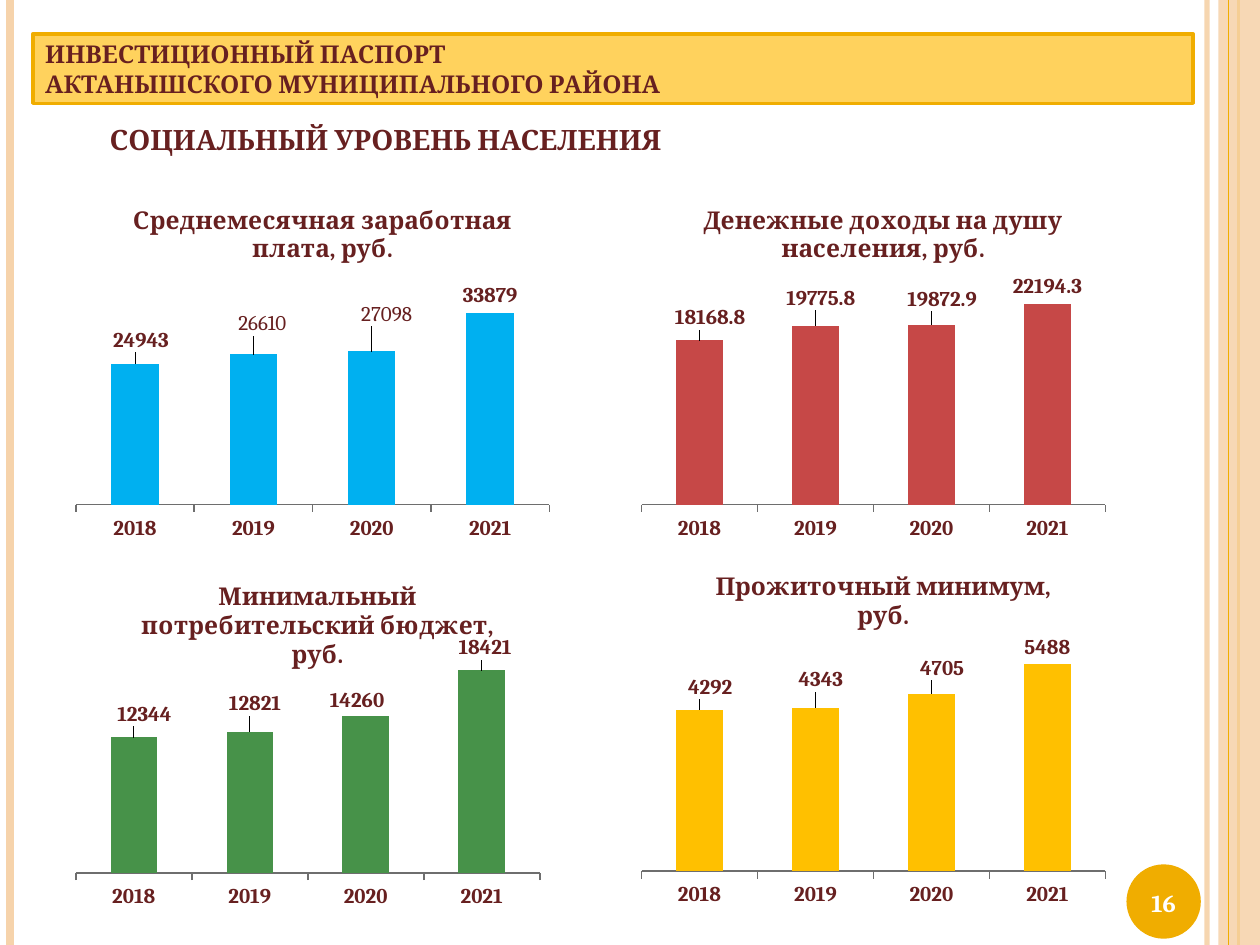
import pptx
import pptx.chart.data
import pptx.dml.color
import pptx.enum.chart
import pptx.enum.shapes
import pptx.enum.text
import pptx.oxml
import pptx.oxml.ns
import pptx.util
from lxml import etree

Pt = pptx.util.Pt
qn = pptx.oxml.ns.qn
FONT = "Cambria"
COLORS = {"peach": "F6D3AB", "gold": "F0AD00", "banner": "FFD25D", "text": "672020",
          "white": "FFFFFF", "axis": "6E6E6E", "wages": "00B0F0", "income": "C64847",
          "budget": "479249", "minimum": "FFC000"}
RGB = {name: pptx.dml.color.RGBColor.from_string(value) for name, value in COLORS.items()}


def style_font(font, size, color="text", bold=True):
    font.name, font.size, font.bold = FONT, Pt(size), bold
    font.color.rgb = RGB[color]


def manual_layout(parent, index, **values):
    """Place a c:layout with the given manualLayout values in a chart element."""
    for old in parent.findall(qn("c:layout")):
        parent.remove(old)
    layout = etree.Element(qn("c:layout"))
    manual = etree.SubElement(layout, qn("c:manualLayout"))
    for name, value in values.items():
        etree.SubElement(manual, qn("c:" + name)).set("val", str(value))
    parent.insert(index, layout)


presentation = pptx.Presentation()
presentation.slide_width, presentation.slide_height = Pt(720), Pt(540)
slide = presentation.slides.add_slide(presentation.slide_layouts[5])
shapes = slide.shapes

# Side stripes: x, colour, width, opacity in percent; the band lies over the third one
stripes = [(689.76, "peach", 3, 93), (5.76, "peach", 4.5, 100),
           (707.76, "gold", 1.5, 100), (702, "gold", 0.75, 100)]
for number, (x, color, width, opacity) in enumerate(stripes):
    if number == 3:
        band = shapes.add_shape(pptx.enum.shapes.MSO_SHAPE.RECTANGLE, Pt(696.24), 0, Pt(23.76), Pt(540))
        band.shadow.inherit = False
        band.fill.solid()
        band.fill.fore_color.rgb = RGB["peach"]
        band.line.fill.background()
        band_color = band.fill._xPr.find(".//" + qn("a:srgbClr"))
        etree.SubElement(band_color, qn("a:alpha")).set("val", "87000")
    stripe = shapes.add_connector(pptx.enum.shapes.MSO_CONNECTOR.STRAIGHT, Pt(x), 0, Pt(x), Pt(540))
    stripe.line.color.rgb = RGB[color]
    stripe.line.width = Pt(width)
    if opacity < 100:
        stripe_color = stripe.element.spPr.find(".//" + qn("a:srgbClr"))
        etree.SubElement(stripe_color, qn("a:alpha")).set("val", str(opacity * 1000))
    etree.SubElement(stripe.element.spPr, qn("a:effectLst"))

# Banner and page number disc
banner = shapes.add_shape(pptx.enum.shapes.MSO_SHAPE.RECTANGLE, Pt(18.72), Pt(19.44), Pt(663.12), Pt(39.6))
disc = shapes.add_shape(pptx.enum.shapes.MSO_SHAPE.OVAL, Pt(643.68), Pt(493.92), Pt(42.48), Pt(42.48))
for shape, color in ((banner, "banner"), (disc, "gold")):
    shape.shadow.inherit = False
    shape.fill.solid()
    shape.fill.fore_color.rgb = RGB[color]
disc.line.fill.background()
banner.line.color.rgb = RGB["gold"]
banner.line.width = Pt(2)
banner.text_frame.text = "ИНВЕСТИЦИОННЫЙ ПАСПОРТ\nАКТАНЫШСКОГО МУНИЦИПАЛЬНОГО РАЙОНА"
banner.text_frame.vertical_anchor = pptx.enum.text.MSO_ANCHOR.MIDDLE
for paragraph in banner.text_frame.paragraphs:
    paragraph.alignment = pptx.enum.text.PP_ALIGN.LEFT
    style_font(paragraph.runs[0].font, 14)

page_number = shapes.add_textbox(Pt(640.8), Pt(495.36), Pt(48.24), Pt(41.04)).text_frame
page_number.word_wrap = True
page_number.vertical_anchor = pptx.enum.text.MSO_ANCHOR.MIDDLE
page_number.text = "16"
page_number.paragraphs[0].alignment = pptx.enum.text.PP_ALIGN.CENTER
style_font(page_number.paragraphs[0].runs[0].font, 14, "white")

heading = shapes.title
heading.left, heading.top, heading.width, heading.height = Pt(20.16), Pt(66.24), Pt(663.12), Pt(26.64)
heading.text_frame.text = "СОЦИАЛЬНЫЙ УРОВЕНЬ НАСЕЛЕНИЯ"
heading.text_frame.auto_size = pptx.enum.text.MSO_AUTO_SIZE.NONE
heading.text_frame.vertical_anchor = pptx.enum.text.MSO_ANCHOR.TOP
heading_line = heading.text_frame.paragraphs[0]
heading_line.alignment = pptx.enum.text.PP_ALIGN.JUSTIFY
heading_line._p.get_or_add_pPr().set("indent", str(Pt(35.28)))
style_font(heading_line.runs[0].font, 16)

# Title, colour, frame, values, axis maximum, label shifts in points (None: no label), plain labels
indicators = [
    ("Среднемесячная заработная плата, руб.", "wages", (42.48, 105.84, 283.68, 215.28),
     (24943, 26610, 27098, 33879), 40000, [(3.5, -3.5), (5, -7.5), (8.5, -11.5), (0, 0)], (1, 2)),
    ("Денежные доходы на душу населения, руб.", "income", (365.76, 105.84, 277.92, 215.28),
     (18168.8, 19775.8, 19872.9, 22194.3), 25000, [(6, -3), (3, -6), (6, -5), (0, 0)], ()),
    ("Минимальный потребительский бюджет, руб.", "budget", (42.48, 321.12, 277.92, 209.52),
     (12344, 12821, 14260, 18421), 20000, [(6, -3), (3, -6), None, (2, -3)], ()),
    ("Прожиточный минимум, руб.", "minimum", (365.76, 315.36, 277.92, 215.28),
     (4292, 4343, 4705, 5488), 6000, [(6, -3), (3, -6), (6, -5), (0, 0)], ()),
]
for title, color, frame, values, maximum, shifts, plain in indicators:
    data = pptx.chart.data.CategoryChartData()
    data.categories = ["2018", "2019", "2020", "2021"]
    data.add_series("Series 1", values)
    chart = shapes.add_chart(pptx.enum.chart.XL_CHART_TYPE.COLUMN_CLUSTERED,
                             *[Pt(length) for length in frame], data).chart
    style_font(chart.font, 13.5, bold=False)
    chart.has_legend = False
    chart.has_title = True
    chart.chart_title.text_frame.text = title
    style_font(chart.chart_title.text_frame.paragraphs[0].runs[0].font, 14)
    chart.element.find(".//" + qn("c:title") + "/" + qn("c:overlay")).set("val", "1")
    manual_layout(chart.element.find(".//" + qn("c:plotArea")), 0, layoutTarget="inner",
                  xMode="edge", yMode="edge", x=0.003, y=0.248, w=0.954, h=0.6)

    years = chart.category_axis
    years.major_tick_mark = pptx.enum.chart.XL_TICK_MARK.OUTSIDE
    years.format.line.color.rgb = RGB["axis"]
    years.format.line.width = Pt(1)
    style_font(years.tick_labels.font, 12)
    chart.value_axis.minimum_scale, chart.value_axis.maximum_scale = 0, maximum
    chart.value_axis.has_major_gridlines = False
    chart.value_axis.visible = False

    plot = chart.plots[0]
    plot.gap_width = 150
    plot.vary_by_categories = False
    bars = plot.series[0]
    bars.format.fill.solid()
    bars.format.fill.fore_color.rgb = RGB[color]
    bars.data_labels.show_value = True
    bars.data_labels.position = pptx.enum.chart.XL_LABEL_POSITION.OUTSIDE_END
    style_font(bars.data_labels.font, 12)
    for number, shift in enumerate(shifts):
        if shift == (0, 0):
            continue
        label = bars.points[number].data_label
        style_font(label.font, 12, bold=number not in plain)
        label.position = pptx.enum.chart.XL_LABEL_POSITION.OUTSIDE_END
        label_xml = chart.element.xpath(f".//c:dLbl[c:idx/@val='{number}']")[0]
        if shift:
            manual_layout(label_xml, 1, x=round(shift[0] / frame[2], 3), y=round(shift[1] / frame[3], 3))
        else:
            for part in list(label_xml)[1:]:
                label_xml.remove(part)
            etree.SubElement(label_xml, qn("c:delete")).set("val", "1")

budget_2020 = shapes.add_textbox(Pt(181.44), Pt(388.8), Pt(56.88), Pt(21.6)).text_frame
budget_2020.word_wrap = True
budget_2020.text = "14260"
style_font(budget_2020.paragraphs[0].runs[0].font, 12)

presentation.save("out.pptx")
